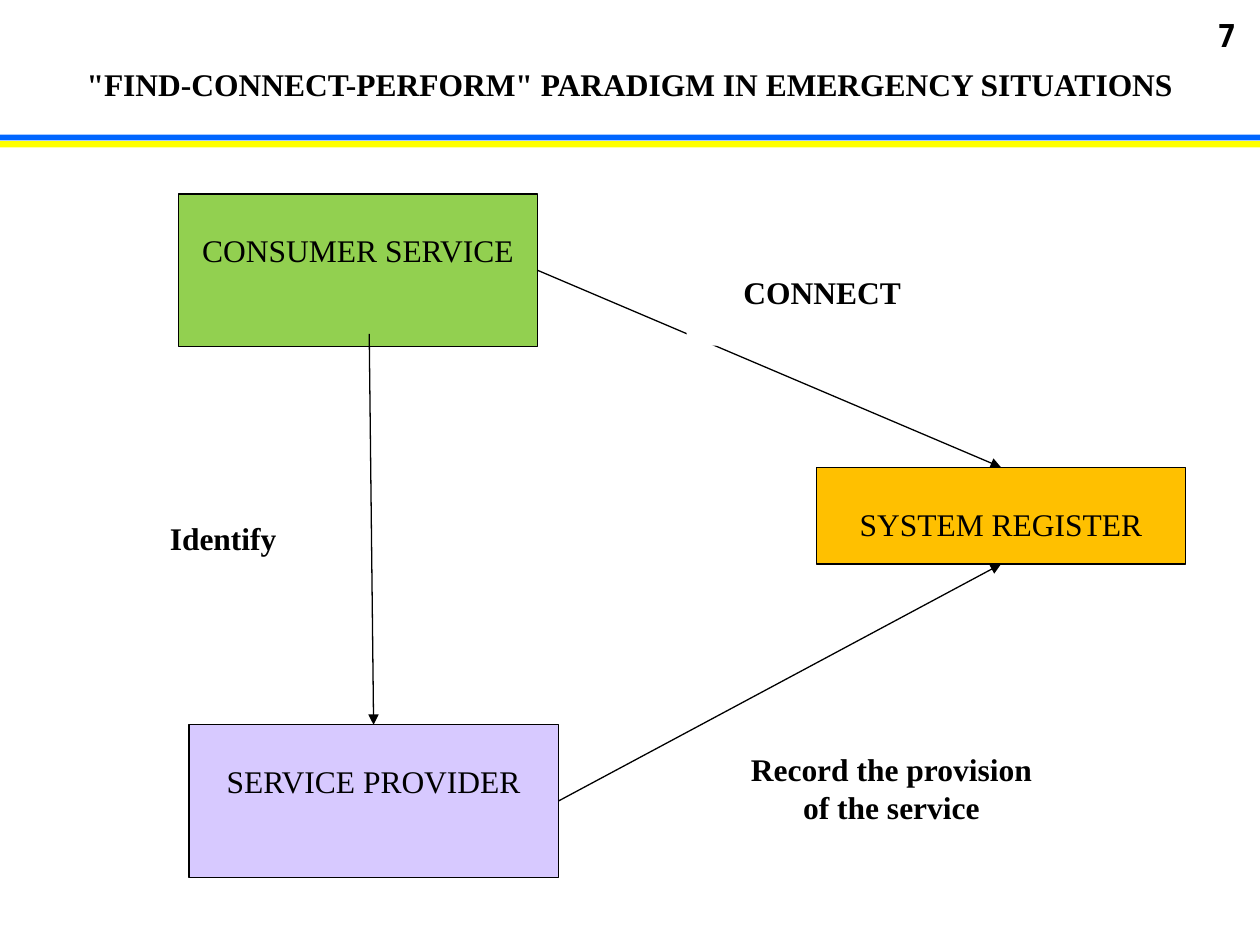
from pptx import Presentation
from pptx.dml.color import RGBColor
from pptx.enum.shapes import MSO_CONNECTOR, MSO_SHAPE
from pptx.enum.text import MSO_ANCHOR, PP_ALIGN
from pptx.oxml.ns import qn
from pptx.util import Pt
from lxml import etree

RECTANGLE = MSO_SHAPE.RECTANGLE
STRAIGHT = MSO_CONNECTOR.STRAIGHT
ANCHOR_TOP = MSO_ANCHOR.TOP
CENTER = PP_ALIGN.CENTER
SERIF = "Times New Roman"
MONO = "DejaVu Sans Mono"
BLACK, WHITE = "000000", "FFFFFF"
TOP, RIGHT, BOTTOM = 0, 3, 2


def color(value):
    return RGBColor.from_string(value)


def set_text(shape, text, bold, inset_top=0, inset_side=4, font=SERIF):
    frame = shape.text_frame
    frame.word_wrap = True
    frame.vertical_anchor = ANCHOR_TOP
    frame.margin_left = frame.margin_right = Pt(inset_side)
    frame.margin_top, frame.margin_bottom = Pt(inset_top), Pt(0)
    frame.text = text
    para = frame.paragraphs[0]
    para.alignment = CENTER
    for span in para.runs:
        span.font.name = font
        span.font.size = Pt(18)
        span.font.bold = bold
        span.font.color.rgb = color(BLACK)


def add_rectangle(page, box, fill, outlined=False):
    shape = page.shapes.add_shape(RECTANGLE, *map(Pt, box))
    shape.shadow.inherit = False
    shape.fill.solid()
    shape.fill.fore_color.rgb = color(fill)
    if outlined:
        shape.line.color.rgb = color(BLACK)
        shape.line.width = Pt(0.75)
    else:
        shape.line.fill.background()
    return shape


def add_header(page, box):
    left, top, width, height = box
    number = page.shapes.add_textbox(Pt(left + width - 35), Pt(top + 9), Pt(32), Pt(22))
    set_text(number, "7", True, inset_side=0, font=MONO)
    title = page.shapes.add_textbox(Pt(left), Pt(top + 37), Pt(width), Pt(26))
    set_text(title, '"FIND-CONNECT-PERFORM" PARADIGM IN EMERGENCY SITUATIONS', True)
    add_rectangle(page, (left, top + height - 7.2, width, 3.2), "0066FF")
    add_rectangle(page, (left, top + height - 3.6, width, 3.6), "FFFF00")


def add_node(page, box, text, fill):
    node = add_rectangle(page, box, fill, outlined=True)
    set_text(node, text, False, inset_top=21.5)
    return node


def add_label(page, box, text):
    set_text(add_rectangle(page, box, WHITE), text, True, inset_top=0.7)


def add_arrow(page, target, target_site, source=None, start=(0, 0)):
    arrow = page.shapes.add_connector(STRAIGHT, Pt(start[0]), Pt(start[1]), Pt(0), Pt(0))
    if source is not None:
        arrow.begin_connect(source, RIGHT)
    arrow.end_connect(target, target_site)
    arrow.line.color.rgb = color(BLACK)
    arrow.line.width = Pt(0.75)
    line = arrow.line._get_or_add_ln()
    etree.SubElement(line, qn("a:tailEnd"), type="triangle")
    etree.SubElement(arrow._element.spPr, qn("a:effectLst"))


def add_diagram(page, box):
    left, top, width, height = box
    consumer = add_node(page, (left + 54.2, top, 204.8, 87.2), "CONSUMER SERVICE", "92D050")
    register = add_node(page, (left + width - 211, top + 156.2, 211, 55.4), "SYSTEM REGISTER", "FFC000")
    provider = add_node(page, (left + 60, top + height - 87.2, 211, 87.2), "SERVICE PROVIDER", "D7C9FF")

    add_arrow(page, register, BOTTOM, source=provider)
    add_arrow(page, provider, TOP, start=(left + 163, top + 80))
    add_arrow(page, register, TOP, source=consumer)

    add_label(page, (left, top + 185.2, 159, 32), "Identify")
    add_label(page, (left + 344.4, top + 44.7, 154.8, 42), "CONNECT")
    add_label(page, (left + 370.3, top + 317, 182.2, 63), "Record the provision of the service")


def main():
    deck = Presentation()
    deck.slide_width, deck.slide_height = Pt(720), Pt(540)
    page = deck.slides.add_slide(deck.slide_layouts[6])
    add_header(page, (0, 0, 720, 84.2))
    add_diagram(page, (48, 110.8, 629.5, 390.6))
    deck.save("out.pptx")


if __name__ == "__main__":
    main()
